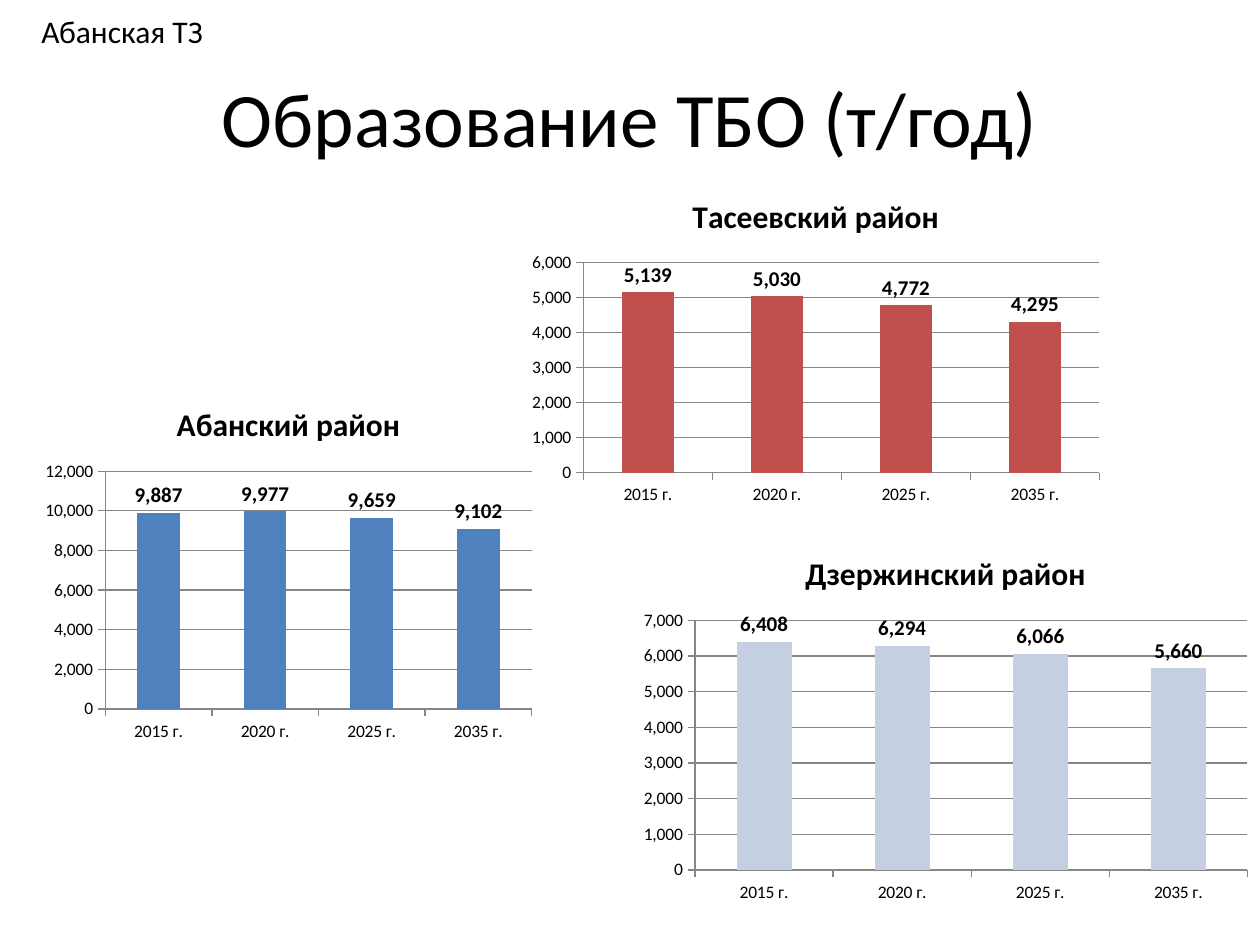
"""Builds a slide with three column charts of yearly waste generation by district."""
from pptx import Presentation
from pptx.chart.data import CategoryChartData
from pptx.dml.color import RGBColor
from pptx.enum.chart import XL_CHART_TYPE as ChartType, XL_LABEL_POSITION as LabelPosition
from pptx.enum.chart import XL_TICK_MARK as TickMark
from pptx.enum.text import MSO_ANCHOR, MSO_AUTO_SIZE, PP_ALIGN
from pptx.util import Inches, Pt

BLACK = RGBColor(0x00, 0x00, 0x00)
GRAY = RGBColor(0x86, 0x86, 0x86)
BLUE = RGBColor(0x4F, 0x81, 0xBD)
RED = RGBColor(0xC0, 0x50, 0x4D)
PALE_BLUE = RGBColor(0xC5, 0xCF, 0xE2)

YEARS = ["2015 г.", "2020 г.", "2025 г.", "2035 г."]
NUMBER_FORMAT = "#,##0"
DISTRICTS = [
    ("Абанский район", (9887, 9977, 9659, 9102), BLUE, (0.28, 3.04, 4.02, 2.9), 12000, 2000),
    ("Тасеевский район", (5139, 5030, 4772, 4295), RED, (4.13, 1.39, 4.69, 2.67), 6000, 1000),
    ("Дзержинский район", (6408, 6294, 6066, 5660), PALE_BLUE, (5.01, 4.22, 4.99, 3), 7000, 1000),
]


def set_font(font, size, bold=False):
    font.name = "Calibri"
    font.size = Pt(size)
    font.bold = bold
    font.color.rgb = BLACK


deck = Presentation()
deck.slide_width = Inches(10)
deck.slide_height = Inches(7.5)
slide = deck.slides.add_slide(deck.slide_layouts[5])

title = slide.shapes.title
title.left, title.top = Inches(0.5), Inches(0.3)
title.width, title.height = Inches(9), Inches(1.25)
title.text_frame.text = "Образование ТБО (т/год)"
title.text_frame.vertical_anchor = MSO_ANCHOR.MIDDLE
title_para = title.text_frame.paragraphs[0]
title_para.alignment = PP_ALIGN.CENTER
set_font(title_para.font, 44)

for name, values, color, bounds, maximum, step in DISTRICTS:
    data = CategoryChartData(number_format=NUMBER_FORMAT)
    data.categories = YEARS
    data.add_series(name, values)
    frame = slide.shapes.add_chart(
        ChartType.COLUMN_CLUSTERED, *[Inches(length) for length in bounds], data
    )
    chart = frame.chart
    set_font(chart.font, 10)
    chart.has_legend = False
    chart.has_title = True
    chart.chart_title.include_in_layout = False
    chart.chart_title.text_frame.text = name
    set_font(chart.chart_title.text_frame.paragraphs[0].font, 18, True)

    for axis in (chart.category_axis, chart.value_axis):
        axis.major_tick_mark = TickMark.OUTSIDE
        axis.minor_tick_mark = TickMark.NONE
        axis.format.line.color.rgb = GRAY
    value_axis = chart.value_axis
    value_axis.minimum_scale = 0
    value_axis.maximum_scale = maximum
    value_axis.major_unit = step
    value_axis.has_major_gridlines = True
    value_axis.major_gridlines.format.line.color.rgb = GRAY
    value_axis.tick_labels.number_format = NUMBER_FORMAT
    value_axis.tick_labels.number_format_is_linked = False

    plot = chart.plots[0]
    plot.gap_width = 150
    plot.vary_by_categories = False
    series = plot.series[0]
    series.format.fill.solid()
    series.format.fill.fore_color.rgb = color
    labels = series.data_labels
    labels.show_value = True
    labels.position = LabelPosition.OUTSIDE_END
    labels.number_format = NUMBER_FORMAT
    labels.number_format_is_linked = False
    set_font(labels.font, 12, True)

zone_box = slide.shapes.add_textbox(Inches(0.23), Inches(0.05), Inches(1.5), Inches(0.4))
zone_box.text_frame.text = "Абанская ТЗ"
zone_box.text_frame.word_wrap = False
zone_box.text_frame.auto_size = MSO_AUTO_SIZE.SHAPE_TO_FIT_TEXT
set_font(zone_box.text_frame.paragraphs[0].font, 18)

deck.save("out.pptx")
